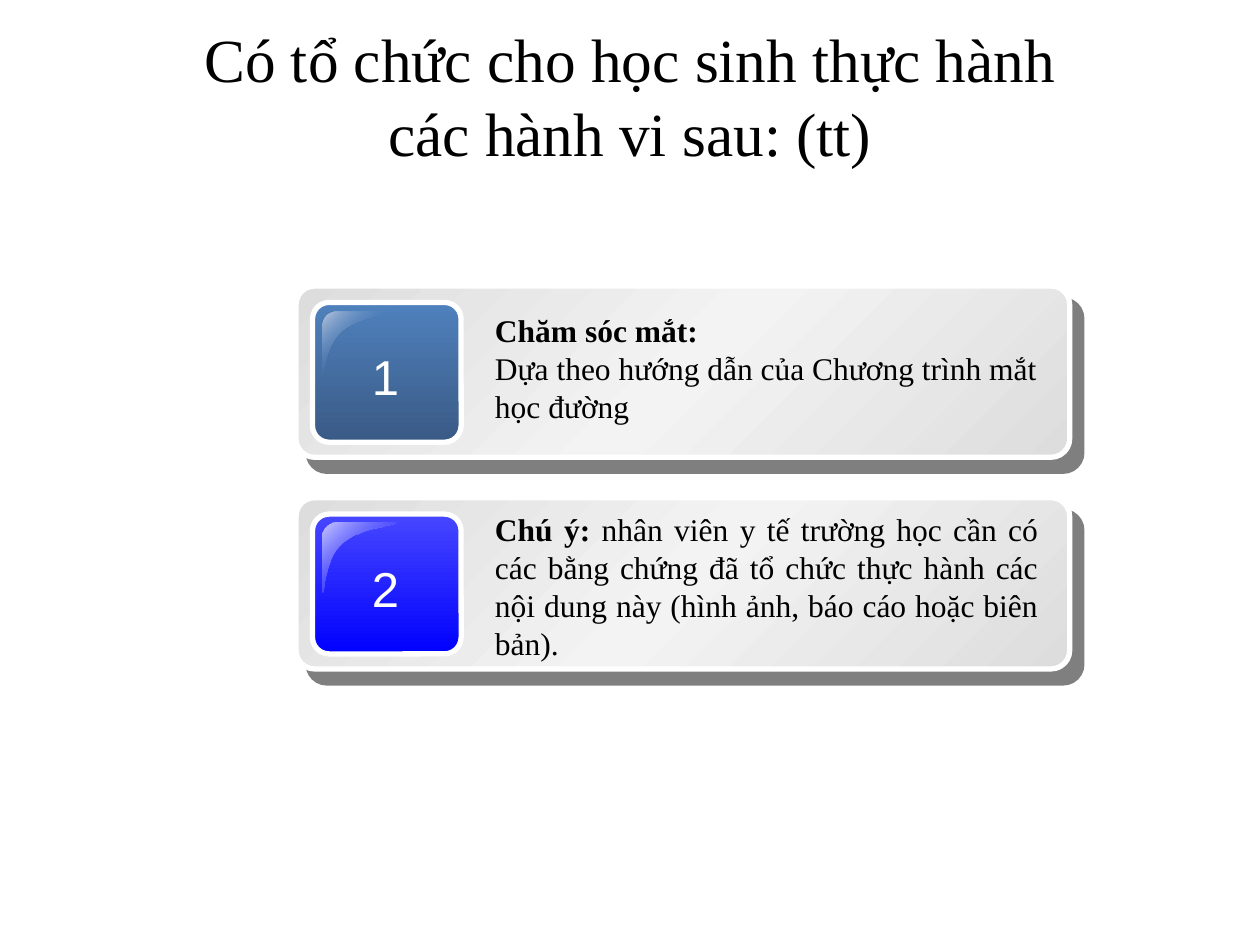
from dataclasses import dataclass

from lxml.etree import SubElement
from pptx import Presentation
from pptx.dml.color import RGBColor
from pptx.enum.shapes import MSO_SHAPE
from pptx.enum.text import MSO_ANCHOR, MSO_AUTO_SIZE, PP_ALIGN
from pptx.oxml.ns import qn
from pptx.shapes.autoshape import Shape
from pptx.shapes.shapetree import GroupShapes
from pptx.util import Inches, Pt

WHITE = RGBColor(0xFF, 0xFF, 0xFF)
BLACK = RGBColor(0x00, 0x00, 0x00)
SILVER = RGBColor(0xDD, 0xDD, 0xDD)
PALE = RGBColor(0xF3, 0xF3, 0xF3)
STEEL = RGBColor(0x4F, 0x81, 0xBD)
STEEL_DARK = RGBColor(0x3A, 0x5A, 0x86)
STEEL_LIGHT = RGBColor(0xBB, 0xC7, 0xDE)
BLUE_MID = RGBColor(0x47, 0x47, 0xFF)
BLUE = RGBColor(0x00, 0x00, 0xFF)
BLUE_LIGHT = RGBColor(0xC9, 0xC9, 0xFF)

SERIF = "Times New Roman"
SANS = "Arial"
FIRST_TOP = 2.27
PITCH = 1.68
CURVE_STEPS = 12


@dataclass(frozen=True)
class Stop:
    position: int
    color: RGBColor
    alpha: int = 100


@dataclass(frozen=True)
class Run:
    text: str
    bold: bool = False


@dataclass(frozen=True)
class Card:
    number: str
    badge: list[Stop]
    gloss: list[Stop]
    paragraphs: list[list[Run]]
    align: PP_ALIGN
    text_top: float
    text_height: float


CARDS = [
    Card(
        "1",
        [Stop(0, STEEL), Stop(100, STEEL_DARK)],
        [Stop(0, STEEL_LIGHT), Stop(50, STEEL, 0), Stop(100, STEEL_LIGHT)],
        [
            [Run("Chăm sóc mắt:", True)],
            [Run("Dựa theo hướng dẫn của Chương trình mắt học đường")],
        ],
        PP_ALIGN.LEFT, 2.42, 1.01,
    ),
    Card(
        "2",
        [Stop(0, BLUE_MID), Stop(100, BLUE)],
        [Stop(0, BLUE_LIGHT), Stop(100, BLUE, 0)],
        [[
            Run("Chú ý: ", True),
            Run("nhân viên y tế trường học cần có các bằng chứng đã tổ chức "
                "thực hành các nội dung này (hình ảnh, báo cáo hoặc biên bản)."),
        ]],
        PP_ALIGN.JUSTIFY, 4.0, 1.31,
    ),
]


def add_color(parent, color: RGBColor, alpha: int) -> None:
    clr = SubElement(parent, qn("a:srgbClr"), val=str(color))
    if alpha < 100:
        SubElement(clr, qn("a:alpha"), val=str(alpha * 1000))


def fill_gradient(sp: Shape, stops: list[Stop], angle: int) -> None:
    sp.fill.gradient()
    sp.fill.gradient_angle = 360 - angle
    gs_list = sp.element.spPr.find(f"{qn('a:gradFill')}/{qn('a:gsLst')}")
    for gs in list(gs_list):
        gs_list.remove(gs)
    for stop in stops:
        gs = SubElement(gs_list, qn("a:gs"), pos=str(stop.position * 1000))
        add_color(gs, stop.color, stop.alpha)


def add_shadow(sp: Shape) -> None:
    effects = sp.element.spPr.find(qn("a:effectLst"))
    shadow = SubElement(effects, qn("a:outerShdw"), dist=str(Pt(10.6)),
                        dir=str(49 * 60000), algn="ctr", rotWithShape="0")
    add_color(shadow, BLACK, 50)


def add_panel(shapes: GroupShapes, left: float, top: float, width: float,
              height: float, radius: float, stops: list[Stop], angle: int) -> Shape:
    sp = shapes.add_shape(MSO_SHAPE.ROUNDED_RECTANGLE, Inches(left), Inches(top),
                          Inches(width), Inches(height))
    sp.adjustments[0] = radius
    fill_gradient(sp, stops, angle)
    sp.line.color.rgb = WHITE
    sp.line.width = Pt(3)
    sp.shadow.inherit = False
    return sp


def bezier(a, b, c, d) -> list[tuple[float, float]]:
    points = []
    for i in range(1, CURVE_STEPS + 1):
        t = i / CURVE_STEPS
        u = 1 - t
        weights = (u ** 3, 3 * u * u * t, 3 * u * t * t, t ** 3)
        points.append(tuple(sum(w * q[k] for w, q in zip(weights, (a, b, c, d)))
                            for k in (0, 1)))
    return points


def add_gloss(shapes: GroupShapes, left: float, top: float, stops: list[Stop]) -> None:
    start = (0.11, 0)
    outline = bezier(start, (0.05, 0), (0, 0.05), (0, 0.11))
    outline.append((0, 0.55))
    outline += bezier((0, 0.55), (0.02, 0.56), (0.01, 0.29), (0.16, 0.16))
    outline += bezier((0.16, 0.16), (0.3, 0.04), (0.59, 0.03), (0.58, 0))
    points = [(Inches(left + x), Inches(top + y)) for x, y in outline]
    builder = shapes.build_freeform(Inches(left + start[0]), Inches(top + start[1]))
    builder.add_line_segments(points, close=True)
    sp = builder.convert_to_shape()
    fill_gradient(sp, stops, 45)
    sp.line.fill.background()
    sp.shadow.inherit = False


def add_text(shapes: GroupShapes, left: float, top: float, width: float,
             height: float, paragraphs: list[list[Run]], font: str, size: int,
             color: RGBColor, align: PP_ALIGN, wrap: bool = True) -> None:
    tf = shapes.add_textbox(Inches(left), Inches(top), Inches(width),
                            Inches(height)).text_frame
    tf.word_wrap = wrap
    tf.auto_size = MSO_AUTO_SIZE.SHAPE_TO_FIT_TEXT
    for i, runs in enumerate(paragraphs):
        p = tf.add_paragraph() if i else tf.paragraphs[0]
        p.alignment = align
        for run in runs:
            r = p.add_run()
            r.text = run.text
            r.font.name = font
            r.font.size = Pt(size)
            r.font.bold = run.bold
            r.font.color.rgb = color


def add_card(s, card: Card, top: float) -> None:
    shapes = s.shapes.add_group_shape().shapes
    silver = [Stop(0, SILVER), Stop(50, PALE), Stop(100, SILVER)]
    add_shadow(add_panel(shapes, 2.35, top, 6.14, 1.36, 0.109, silver, 45))
    add_panel(shapes, 2.48, top + 0.13, 1.18, 1.11, 0.119, card.badge, 90)
    add_gloss(shapes, 2.56, top + 0.2, card.gloss)
    add_text(shapes, 2.85, top + 0.43, 0.42, 0.57, [[Run(card.number)]], SANS, 28,
             WHITE, PP_ALIGN.CENTER, wrap=False)
    add_text(shapes, 3.83, card.text_top, 4.51, card.text_height, card.paragraphs,
             SERIF, 18, BLACK, card.align)


def add_title(s, lines: list[str]) -> None:
    title = s.shapes.title
    title.left, title.top = Inches(0.5), Inches(0.17)
    title.width, title.height = Inches(9), Inches(1.17)
    tf = title.text_frame
    tf.auto_size = MSO_AUTO_SIZE.NONE
    tf.vertical_anchor = MSO_ANCHOR.MIDDLE
    p = tf.paragraphs[0]
    p.alignment = PP_ALIGN.CENTER
    for i, line in enumerate(lines):
        if i:
            p.add_line_break()
        r = p.add_run()
        r.text = line
        r.font.name = SERIF
        r.font.size = Pt(35)
        r.font.color.rgb = BLACK


def main() -> None:
    prs = Presentation()
    prs.slide_width, prs.slide_height = Inches(10), Inches(7.5)
    s = prs.slides.add_slide(prs.slide_layouts[5])
    for i, card in enumerate(CARDS):
        add_card(s, card, FIRST_TOP + i * PITCH)
    add_title(s, ["Có tổ chức cho học sinh thực hành", "các hành vi sau: (tt)"])
    prs.save("out.pptx")


if __name__ == "__main__":
    main()
